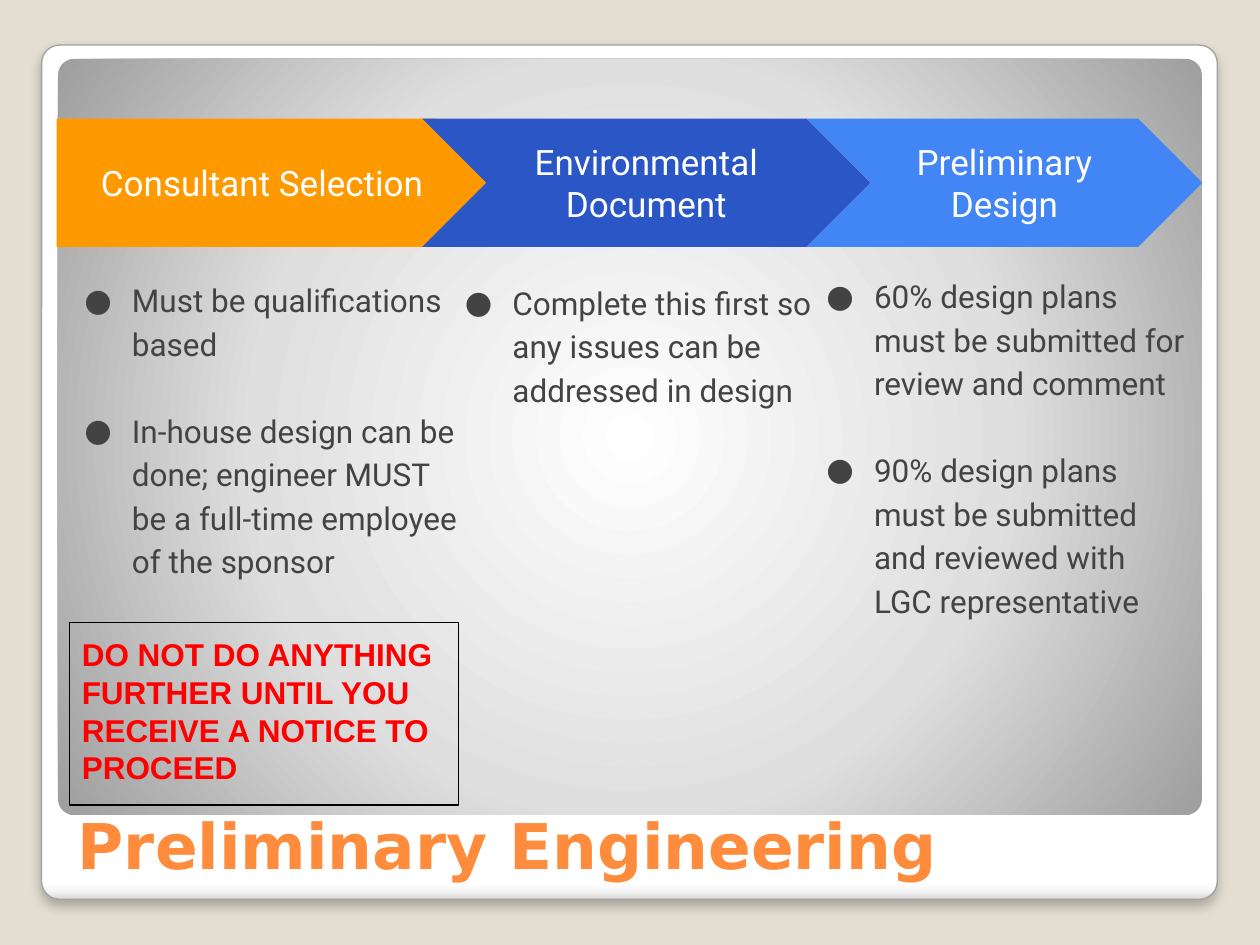
from dataclasses import dataclass

from lxml import etree
from pptx import Presentation
from pptx.dml.color import RGBColor
from pptx.enum.shapes import MSO_SHAPE
from pptx.enum.text import MSO_ANCHOR, MSO_AUTO_SIZE, PP_ALIGN
from pptx.oxml.ns import qn
from pptx.util import Cm, Pt

ROUNDED, RECTANGLE = MSO_SHAPE.ROUNDED_RECTANGLE, MSO_SHAPE.RECTANGLE
PENTAGON, CHEVRON = MSO_SHAPE.PENTAGON, MSO_SHAPE.CHEVRON
TOP, MIDDLE, BOTTOM = MSO_ANCHOR.TOP, MSO_ANCHOR.MIDDLE, MSO_ANCHOR.BOTTOM
LEFT, CENTER = PP_ALIGN.LEFT, PP_ALIGN.CENTER
NO_AUTOFIT = MSO_AUTO_SIZE.NONE
COMPARISON_LAYOUT = 4


@dataclass(frozen=True)
class Theme:
    background: str = "E3DED1"
    frame_line: str = "A2A0A0"
    shadow: str = "000000"
    title: str = "FF8C3C"
    body: str = "434343"
    light: str = "FFFFFF"
    warning: str = "FF0000"
    border: str = "000000"
    title_font: str = "DejaVu Sans"
    body_font: str = "Roboto"
    warning_font: str = "Arial"
    title_size: int = 36
    step_size: int = 20
    body_size: int = 18
    line_width: float = 0.75
    frame_stops: tuple = ((0, "FFFFFF"), (98, "FFFFFF"), (99, "F6F6F6"), (100, "D8D8D8"))
    panel_stops: tuple = ((0, "FFFFFF"), (55, "DFDFDF"), (100, "9E9E9E"))


@dataclass(frozen=True)
class Box:
    left: float
    top: float
    width: float
    height: float

    def lengths(self) -> tuple:
        return Cm(self.left), Cm(self.top), Cm(self.width), Cm(self.height)


@dataclass(frozen=True)
class Step:
    label: str
    shape_kind: int
    color: str
    arrow: Box
    list_box: Box
    items: tuple


THEME = Theme()
ARROW_TOP, ARROW_HEIGHT = 2.39, 2.59
INSET = 0.25
LIST_INDENT, BULLET_HANG = 1.27, -0.96
ITEM_GAP = 24.8

STEPS = (
    Step("Preliminary Design", CHEVRON, "4285F4",
         Box(16.26, ARROW_TOP, 7.98, ARROW_HEIGHT), Box(16.1, 5.23, 8.15, 6.27),
         ("60% design plans must be submitted for review and comment",
          "90% design plans must be submitted and reviewed with LGC representative")),
    Step("Consultant Selection", PENTAGON, "FF9900",
         Box(1.14, ARROW_TOP, 8.94, ARROW_HEIGHT), Box(1.14, 5.31, 8.38, 9.86),
         ("Must be qualifications based",
          "In-house design can be done; engineer MUST be a full-time employee of the sponsor")),
    Step("Environmental Document", CHEVRON, "2A56C6",
         Box(8.51, ARROW_TOP, 9.04, ARROW_HEIGHT), Box(8.81, 5.36, 7.85, 4.11),
         ("Complete this first so any issues can be addressed in design",)),
)


def add_child(parent, tag: str, **attributes):
    return etree.SubElement(parent, qn(tag), attributes)


def add_block(slide, kind: int, box: Box, fill=None, line=None, adjustment=None):
    block = slide.shapes.add_shape(kind, *box.lengths())
    block.shadow.inherit = False
    if adjustment is not None:
        block.adjustments[0] = adjustment
    if fill:
        block.fill.solid()
        block.fill.fore_color.rgb = RGBColor.from_string(fill)
    else:
        block.fill.background()
    if line:
        block.line.color.rgb = RGBColor.from_string(line)
        block.line.width = Pt(THEME.line_width)
    else:
        block.line.fill.background()
    return block


def set_gradient(block, stops: tuple, radial: bool = False) -> None:
    properties = block.element.spPr
    gradient = etree.Element(qn("a:gradFill"), rotWithShape="1")
    stop_list = add_child(gradient, "a:gsLst")
    for position, color in stops:
        stop = add_child(stop_list, "a:gs", pos=str(position * 1000))
        add_child(stop, "a:srgbClr", val=color)
    if radial:
        route = add_child(gradient, "a:path", path="circle")
        add_child(route, "a:fillToRect", l="50000", t="50000", r="50000", b="50000")
    else:
        add_child(gradient, "a:lin", ang="5400000", scaled="0")
    properties.replace(properties.find(qn("a:noFill")), gradient)


def set_shadow(block) -> None:
    effects = block.element.spPr.find(qn("a:effectLst"))
    shadow = add_child(effects, "a:outerShdw", blurRad=str(Pt(6)), dist=str(Pt(4)),
                       dir="5400000", algn="t", rotWithShape="0")
    color = add_child(shadow, "a:srgbClr", val=THEME.shadow)
    add_child(color, "a:alpha", val="25000")


def set_bullet(para) -> None:
    properties = para._p.get_or_add_pPr()
    properties.set("marL", str(Cm(LIST_INDENT)))
    properties.set("indent", str(Cm(BULLET_HANG)))
    color = add_child(properties, "a:buClr")
    add_child(color, "a:srgbClr", val=THEME.body)
    add_child(properties, "a:buFont", typeface=THEME.body_font)
    add_child(properties, "a:buChar", char="●")


def write_text(shape, *texts: str, font: str, size: int, color: str, bold: bool = False,
               align: int = LEFT, anchor: int = TOP, inset_y: float = INSET,
               spacing: float = 1.0, gap: float = 0, bullets: bool = False) -> None:
    frame = shape.text_frame
    frame.word_wrap = True
    frame.auto_size = NO_AUTOFIT
    frame.vertical_anchor = anchor
    frame.margin_left = frame.margin_right = Cm(INSET)
    frame.margin_top = frame.margin_bottom = Cm(inset_y)
    for index, text in enumerate(texts):
        para = frame.add_paragraph() if index else frame.paragraphs[0]
        para.alignment = align
        para.line_spacing = spacing
        para.space_before = Pt(gap if index else 0)
        para.space_after = Pt(0)
        if bullets:
            set_bullet(para)
        span = para.add_run()
        span.text = text
        span.font.name = font
        span.font.size = Pt(size)
        span.font.bold = bold
        span.font.color.rgb = RGBColor.from_string(color)


def place(slide, placeholder, box: Box) -> None:
    placeholder.left, placeholder.top, placeholder.width, placeholder.height = box.lengths()
    slide.shapes.element.append(placeholder.element)


def draw_step(slide, step: Step, placeholder) -> None:
    arrow = add_block(slide, step.shape_kind, step.arrow, fill=step.color, adjustment=0.5)
    write_text(arrow, step.label, font=THEME.body_font, size=THEME.step_size,
               color=THEME.light, align=CENTER, anchor=MIDDLE)
    place(slide, placeholder, step.list_box)
    write_text(placeholder, *step.items, font=THEME.body_font, size=THEME.body_size,
               color=THEME.body, spacing=1.15, gap=ITEM_GAP, bullets=True)


def main() -> None:
    deck = Presentation()
    deck.slide_width, deck.slide_height = Cm(25.4), Cm(19.05)
    page = deck.slides.add_slide(deck.slide_layouts[COMPARISON_LAYOUT])
    page.background.fill.solid()
    page.background.fill.fore_color.rgb = RGBColor.from_string(THEME.background)
    title, *bodies = page.placeholders

    frame = add_block(page, ROUNDED, Box(0.84, 0.91, 23.7, 17.22),
                      line=THEME.frame_line, adjustment=0.021)
    set_gradient(frame, THEME.frame_stops)
    set_shadow(frame)
    panel = add_block(page, ROUNDED, Box(1.17, 1.19, 23.06, 15.24), adjustment=0.021)
    set_gradient(panel, THEME.panel_stops, radial=True)

    place(page, title, Box(1.32, 14.99, 22.73, 2.92))
    write_text(title, "Preliminary Engineering", font=THEME.title_font, size=THEME.title_size,
               color=THEME.title, bold=True, anchor=BOTTOM, inset_y=0.13)

    for step, body in zip(STEPS, bodies):
        draw_step(page, step, body)
    for spare in bodies[len(STEPS):]:
        page.shapes.element.remove(spare.element)

    warning = add_block(page, RECTANGLE, Box(1.4, 12.55, 7.85, 3.68), line=THEME.border)
    write_text(warning, "DO NOT DO ANYTHING FURTHER UNTIL YOU RECEIVE A NOTICE TO PROCEED",
               font=THEME.warning_font, size=THEME.body_size, color=THEME.warning, bold=True)
    deck.save("out.pptx")


if __name__ == "__main__":
    main()
